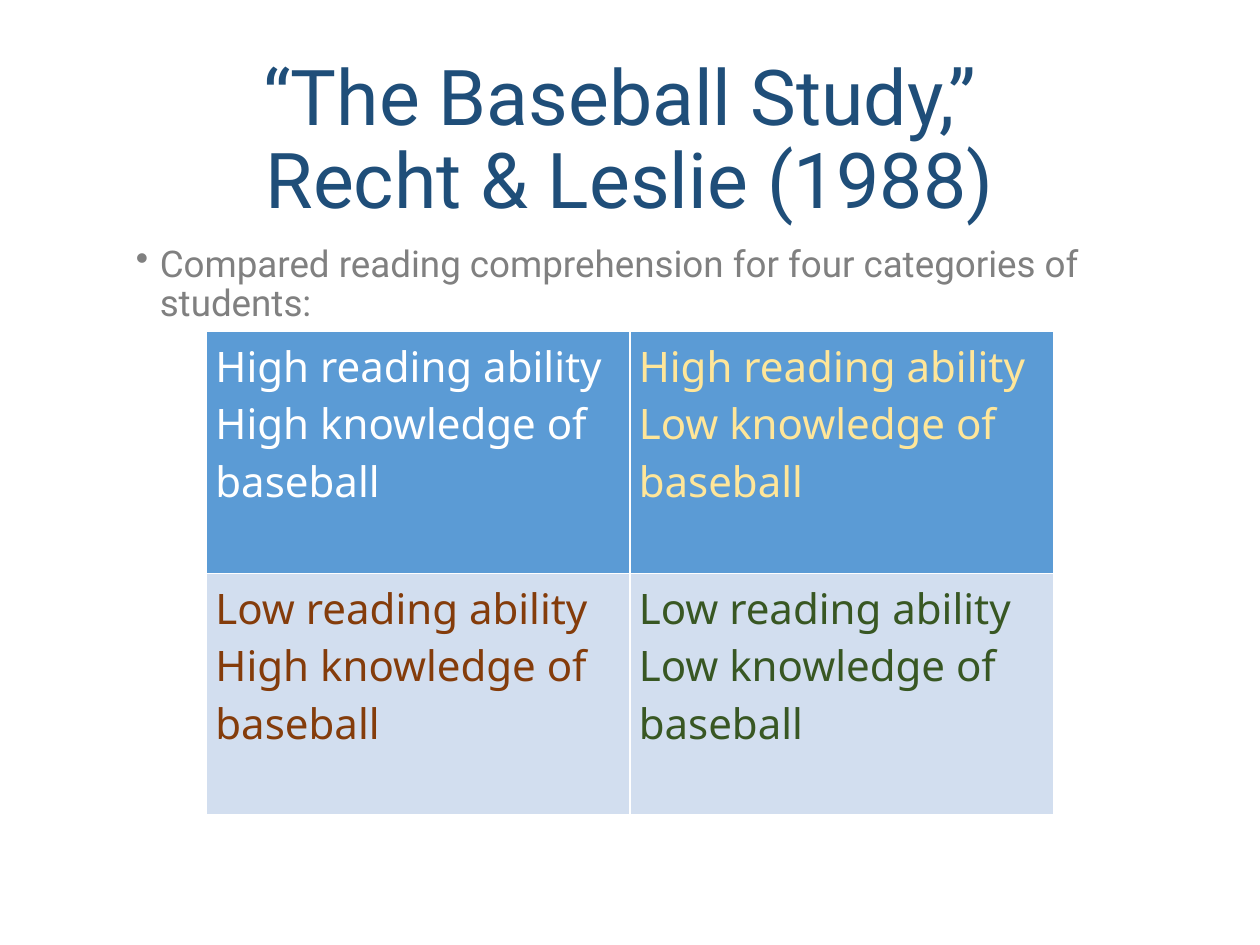
from lxml import etree
from pptx import Presentation
from pptx.dml.color import RGBColor
from pptx.enum.text import MSO_ANCHOR, PP_ALIGN
from pptx.oxml.ns import qn
from pptx.util import Inches, Pt

CENTER, LEFT = PP_ALIGN.CENTER, PP_ALIGN.LEFT
MIDDLE, TOP = MSO_ANCHOR.MIDDLE, MSO_ANCHOR.TOP

NAVY = RGBColor(0x1F, 0x4E, 0x79)
GRAY = RGBColor(0x80, 0x80, 0x80)
WHITE = RGBColor(0xFF, 0xFF, 0xFF)
YELLOW = RGBColor(0xFF, 0xE6, 0x99)
BROWN = RGBColor(0x84, 0x3C, 0x0B)
GREEN = RGBColor(0x38, 0x57, 0x23)
BLUE = RGBColor(0x5B, 0x9B, 0xD5)
PALE_BLUE = RGBColor(0xD2, 0xDE, 0xEF)

HEADING_FONT = "Roboto"
TABLE_FONT = "Noto Sans"
COLUMN_WIDTH, ROW_HEIGHT = 3.36, 1.92

LEVELS = ("High", "Low")
ROW_FILLS = (BLUE, PALE_BLUE)
TEXT_COLORS = ((WHITE, YELLOW), (BROWN, GREEN))


def style_runs(paragraph, font_name, size, color):
    for run in paragraph.runs:
        run.font.name = font_name
        run.font.size = Pt(size)
        run.font.color.rgb = color


def add_text(slide, box, text, size, color, align, anchor):
    frame = slide.shapes.add_textbox(*map(Inches, box)).text_frame
    frame.word_wrap = True
    frame.vertical_anchor = anchor
    frame.text = text
    paragraph = frame.paragraphs[0]
    paragraph.alignment = align
    paragraph.line_spacing = 0.9
    style_runs(paragraph, HEADING_FONT, size, color)
    return paragraph


def add_bullet(paragraph, indent):
    properties = paragraph._p.get_or_add_pPr()
    properties.set("marL", str(Inches(indent)))
    properties.set("indent", str(-Inches(indent)))
    etree.SubElement(properties, qn("a:buChar"), char="•")


def add_borders(cell, color, width):
    properties = cell._tc.get_or_add_tcPr()
    for side in ("a:lnL", "a:lnR", "a:lnT", "a:lnB"):
        line = etree.SubElement(properties, qn(side), w=str(Pt(width)))
        fill = etree.SubElement(line, qn("a:solidFill"))
        etree.SubElement(fill, qn("a:srgbClr"), val=str(color))


def fill_cell(cell, lines, text_color, fill_color):
    add_borders(cell, WHITE, 1)
    cell.fill.solid()
    cell.fill.fore_color.rgb = fill_color
    cell.margin_left = cell.margin_right = Inches(0.07)
    cell.margin_top = cell.margin_bottom = Inches(0.05)
    cell.text_frame.text = "\n".join(lines)
    for paragraph in cell.text_frame.paragraphs:
        style_runs(paragraph, TABLE_FONT, 24, text_color)


def add_category_table(slide, left, top):
    count = len(LEVELS)
    table = slide.shapes.add_table(
        count, count, Inches(left), Inches(top),
        Inches(count * COLUMN_WIDTH), Inches(count * ROW_HEIGHT)).table
    # Rows vary reading ability, columns vary knowledge of baseball
    for row, ability in enumerate(LEVELS):
        for column, knowledge in enumerate(LEVELS):
            lines = (f"{ability} reading ability",
                     f"{knowledge} knowledge of baseball")
            fill_cell(table.cell(row, column), lines,
                      TEXT_COLORS[row][column], ROW_FILLS[row])


def main():
    presentation = Presentation()
    presentation.slide_width = Inches(10)
    presentation.slide_height = Inches(7.5)
    slide = presentation.slides.add_slide(presentation.slide_layouts[6])

    # Title
    add_text(slide, (0.69, 0.4, 8.62, 1.45),
             "“The Baseball Study,” \vRecht & Leslie (1988)",
             44, NAVY, CENTER, MIDDLE)

    # Introductory bullet
    intro = add_text(
        slide, (0.98, 1.9, 8.03, 4.73),
        "Compared reading comprehension for four categories of students:",
        21, GRAY, LEFT, TOP)
    add_bullet(intro, 0.19)

    # Four categories of students
    add_category_table(slide, 1.64, 2.63)

    presentation.save("out.pptx")


if __name__ == "__main__":
    main()
